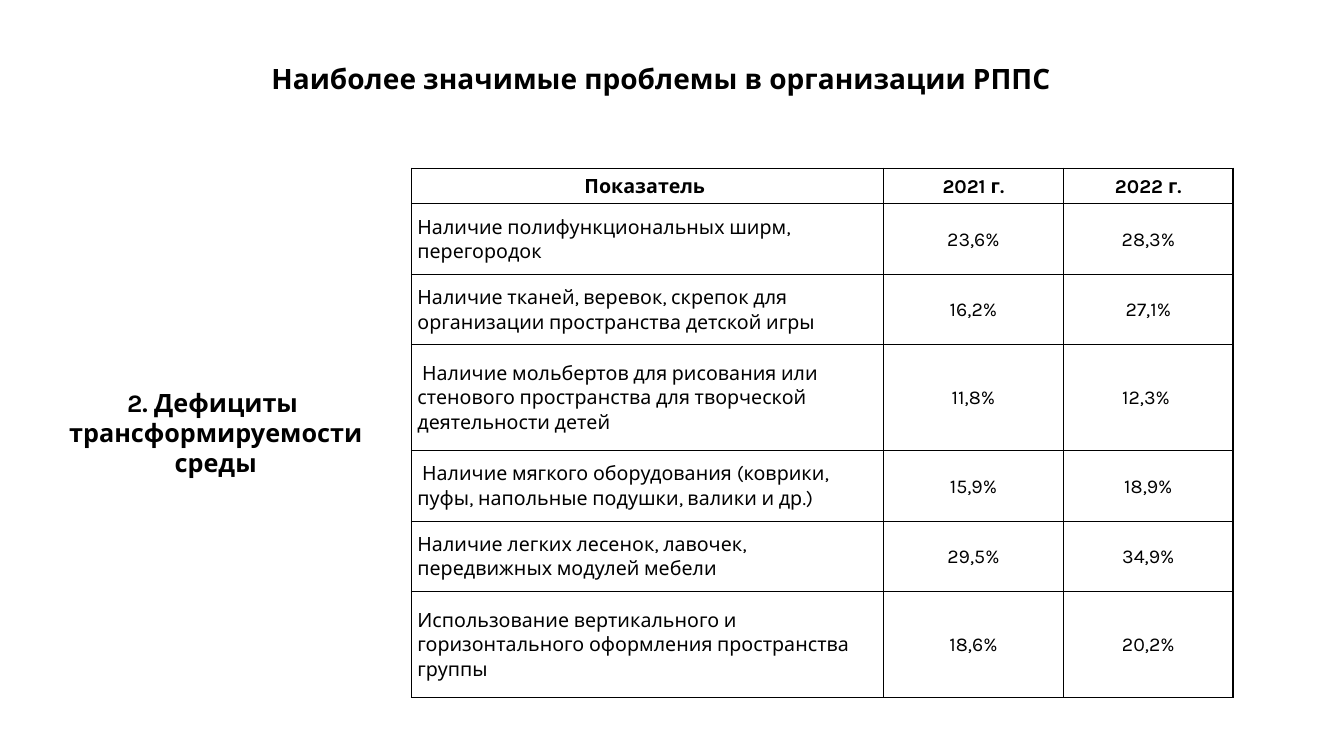
from lxml.etree import SubElement
from pptx import Presentation
from pptx.dml.color import RGBColor
from pptx.enum.text import MSO_ANCHOR, PP_ALIGN
from pptx.oxml.ns import qn
from pptx.util import Inches, Pt

TITLE = "Наиболее значимые проблемы в организации РППС "
SIDE_LINES = ["2. Дефициты ", "трансформируемости ", "среды"]
HEADER = ("Показатель ", "2021 г.", "2022 г.")
# label, 2021, 2022, lines of text in the row
INDICATORS = [
    ("Наличие полифункциональных ширм, перегородок", "23,6%", "28,3%", 2),
    ("Наличие тканей, веревок, скрепок для организации пространства детской игры",
     "16,2%", "27,1%", 2),
    (" Наличие мольбертов для рисования или стенового пространства для творческой "
     "деятельности детей", "11,8%", "12,3% ", 3),
    (" Наличие мягкого оборудования (коврики, пуфы, напольные подушки, валики и др.)",
     "15,9%", "18,9%", 2),
    ("Наличие легких лесенок, лавочек, передвижных модулей мебели", "29,5%", "34,9%", 2),
    ("Использование вертикального и горизонтального оформления пространства группы",
     "18,6%", "20,2%", 3),
]

FONT = "Karla"
BLACK = RGBColor(0, 0, 0)
WHITE = RGBColor(255, 255, 255)
COLUMNS = (4.68, 1.79, 1.68)
LINE_H = 0.35


def style(p, size, bold, align=PP_ALIGN.CENTER):
    p.alignment = align
    for r in p.runs:
        r.font.name, r.font.size, r.font.bold = FONT, Pt(size), bold
        r.font.color.rgb = BLACK


def add_text(slide, box, lines, size, wrap):
    tf = slide.shapes.add_textbox(*map(Inches, box)).text_frame
    tf.word_wrap = wrap
    tf.text = "\n".join(lines)
    for p in tf.paragraphs:
        style(p, size, True)


def add_borders(cell):
    """Put a 1 pt black line on each side; borders must precede the fill."""
    tcPr = cell._tc.get_or_add_tcPr()
    for i, side in enumerate(("lnL", "lnR", "lnT", "lnB")):
        ln = SubElement(tcPr, qn(f"a:{side}"), w=str(Pt(1)))
        fill = SubElement(ln, qn("a:solidFill"))
        SubElement(fill, qn("a:srgbClr"), val=str(BLACK))
        tcPr.insert(i, ln)


def add_indicator_table(slide, left, top):
    rows = [(*HEADER, 1), *INDICATORS]
    height = LINE_H * sum(row[-1] for row in rows)
    frame = slide.shapes.add_table(len(rows), len(COLUMNS), Inches(left), Inches(top),
                                   Inches(sum(COLUMNS)), Inches(height))
    table = frame.table
    for column, width in zip(table.columns, COLUMNS):
        column.width = Inches(width)
    for i, (*texts, lines) in enumerate(rows):
        table.rows[i].height = Inches(LINE_H * lines)
        for j, text in enumerate(texts):
            cell = table.cell(i, j)
            cell.text = text
            cell.vertical_anchor = MSO_ANCHOR.MIDDLE
            cell.margin_left = cell.margin_right = Inches(0.06)
            cell.margin_top = cell.margin_bottom = 0
            cell.fill.solid()
            cell.fill.fore_color.rgb = WHITE
            add_borders(cell)
            p = cell.text_frame.paragraphs[0]
            p.line_spacing = 1.07
            is_label = i > 0 and j == 0
            style(p, 14, i == 0, PP_ALIGN.LEFT if is_label else PP_ALIGN.CENTER)


def main():
    prs = Presentation()
    prs.slide_width, prs.slide_height = Inches(13.33), Inches(7.5)
    slide = prs.slides.add_slide(prs.slide_layouts[6])
    add_text(slide, (1.42, 0.56, 10.34, 0.44), [TITLE], 20, True)
    add_indicator_table(slide, 4.08, 1.67)
    add_text(slide, (0.58, 3.79, 3.12, 1.01), SIDE_LINES, 18, False)
    prs.save("out.pptx")


if __name__ == "__main__":
    main()
